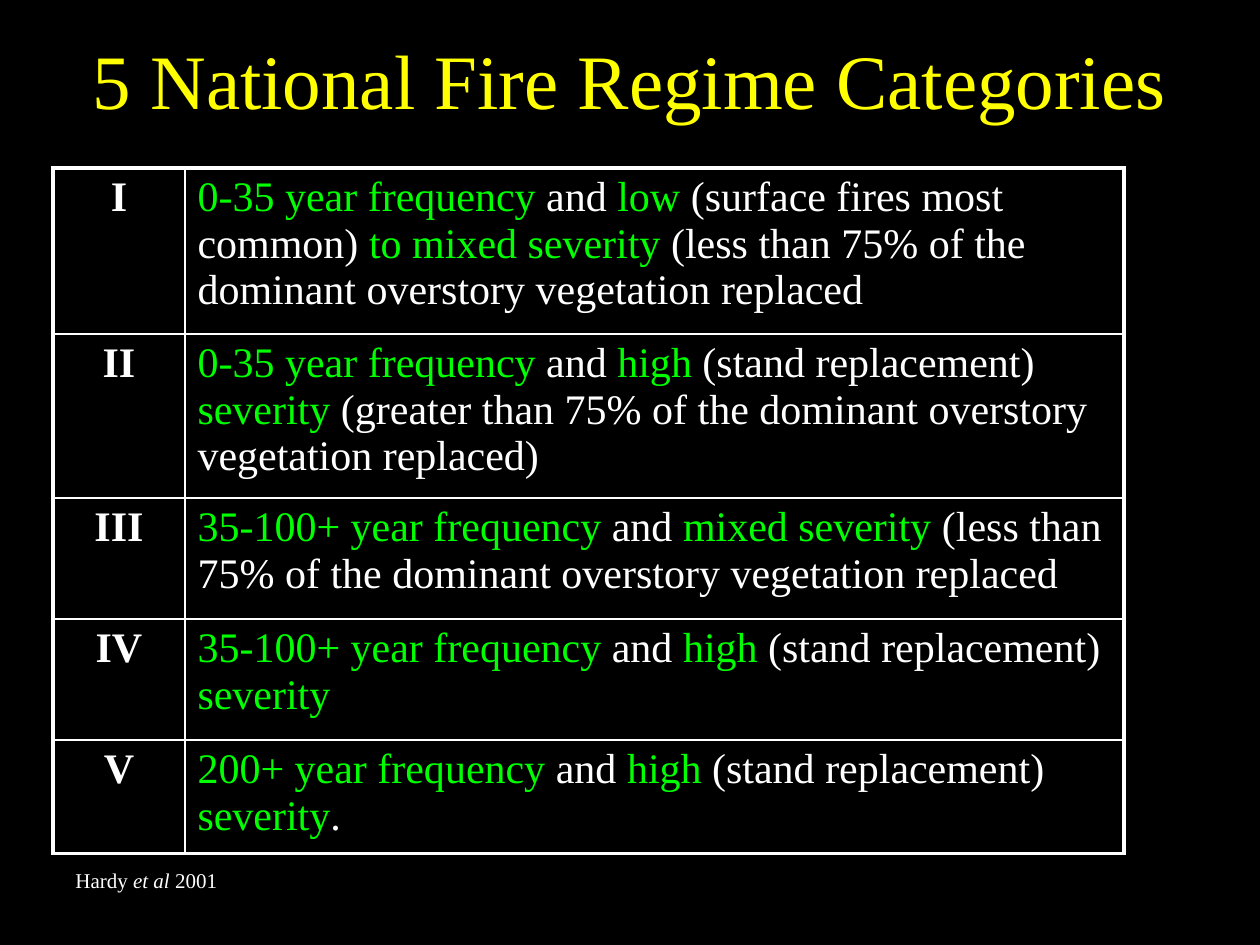
import pptx
import pptx.dml.color
import pptx.enum.text
import pptx.oxml
import pptx.oxml.ns
import pptx.util

BLACK = pptx.dml.color.RGBColor(0, 0, 0)
WHITE = pptx.dml.color.RGBColor(255, 255, 255)
YELLOW = pptx.dml.color.RGBColor(255, 255, 0)
GREEN = pptx.dml.color.RGBColor(0, 255, 0)
CENTER = pptx.enum.text.PP_ALIGN.CENTER
LEFT = pptx.enum.text.PP_ALIGN.LEFT
MIDDLE = pptx.enum.text.MSO_ANCHOR.MIDDLE
TOP = pptx.enum.text.MSO_ANCHOR.TOP

COLUMN_WIDTHS = [132, 939]
ROW_HEIGHTS = [166, 164, 121, 121, 113]
REGIMES = [
    ("I", ["0-35 year frequency", " and ", "low", " (surface fires most common) ",
           "to mixed severity",
           " (less than 75% of the dominant overstory vegetation replaced"]),
    ("II", ["0-35 year frequency", " and ", "high", " (stand replacement) ", "severity",
            " (greater than 75% of the dominant overstory vegetation replaced)"]),
    ("III", ["35-100+ year frequency", " and ", "mixed severity",
             " (less than 75% of the dominant overstory vegetation replaced"]),
    ("IV", ["35-100+ year frequency", " and ", "high", " (stand replacement) ", "severity"]),
    ("V", ["200+ year frequency", " and ", "high", " (stand replacement) ", "severity", "."]),
]


def px(length):
    return pptx.util.Emu(round(length * 914400 / 126))


class SlideBuilder:
    font_name = "Times New Roman"
    thin = 1
    thick = 2.25

    def __init__(self, presentation):
        self.slide = presentation.slides.add_slide(presentation.slide_layouts[6])
        fill = self.slide.background.fill
        fill.solid()
        fill.fore_color.rgb = BLACK

    def runs(self, paragraph, pieces, size, alignment=LEFT):
        paragraph.alignment = alignment
        for text, color, bold, italic in pieces:
            run = paragraph.add_run()
            run.text = text
            run.font.name = self.font_name
            run.font.size = pptx.util.Pt(size)
            run.font.color.rgb = color
            run.font.bold = bold
            run.font.italic = italic

    def text(self, box, pieces, size, alignment=LEFT, anchor=TOP):
        shape = self.slide.shapes.add_textbox(*map(px, box))
        frame = shape.text_frame
        frame.word_wrap = True
        frame.vertical_anchor = anchor
        self.runs(frame.paragraphs[0], pieces, size, alignment)

    def borders(self, cell, widths):
        properties = cell._tc.get_or_add_tcPr()
        for side, width in zip("LRTB", widths):
            properties.append(pptx.oxml.parse_xml(
                f'<a:ln{side} {pptx.oxml.ns.nsdecls("a")} w="{pptx.util.Pt(width)}">'
                f'<a:solidFill><a:srgbClr val="{WHITE}"/></a:solidFill></a:ln{side}>'))

    def table(self, left, top, regimes, size):
        box = (left, top, sum(COLUMN_WIDTHS), sum(ROW_HEIGHTS))
        shape = self.slide.shapes.add_table(
            len(ROW_HEIGHTS), len(COLUMN_WIDTHS), *map(px, box))
        table = shape.table
        table.first_row = False
        table.horz_banding = False
        for column, width in zip(table.columns, COLUMN_WIDTHS):
            column.width = px(width)
        for row, height in zip(table.rows, ROW_HEIGHTS):
            row.height = px(height)
        last = len(regimes) - 1
        for index, (numeral, phrases) in enumerate(regimes):
            upper = self.thick if index == 0 else self.thin
            lower = self.thick if index == last else self.thin
            number_cell, description_cell = table.rows[index].cells
            self.borders(number_cell, (self.thick, self.thin, upper, lower))
            self.borders(description_cell, (self.thin, self.thick, upper, lower))
            for cell in (number_cell, description_cell):
                cell.fill.background()
            self.runs(number_cell.text_frame.paragraphs[0],
                      [(numeral, WHITE, True, False)], size, CENTER)
            description = [(phrase, (GREEN, WHITE)[position % 2], False, False)
                           for position, phrase in enumerate(phrases)]
            self.runs(description_cell.text_frame.paragraphs[0], description, size)


def main():
    presentation = pptx.Presentation()
    presentation.slide_width = px(1260)
    presentation.slide_height = px(945)
    builder = SlideBuilder(presentation)
    builder.text((0, 21, 1260, 116),
                 [("5 National Fire Regime Categories", YELLOW, False, False)],
                 44, CENTER, MIDDLE)
    builder.table(53, 168, REGIMES, 24)
    builder.text((63, 861, 473, 38),
                 [("Hardy ", WHITE, False, False), ("et al", WHITE, False, True),
                  (" 2001", WHITE, False, False)], 12)
    presentation.save("out.pptx")


if __name__ == "__main__":
    main()
